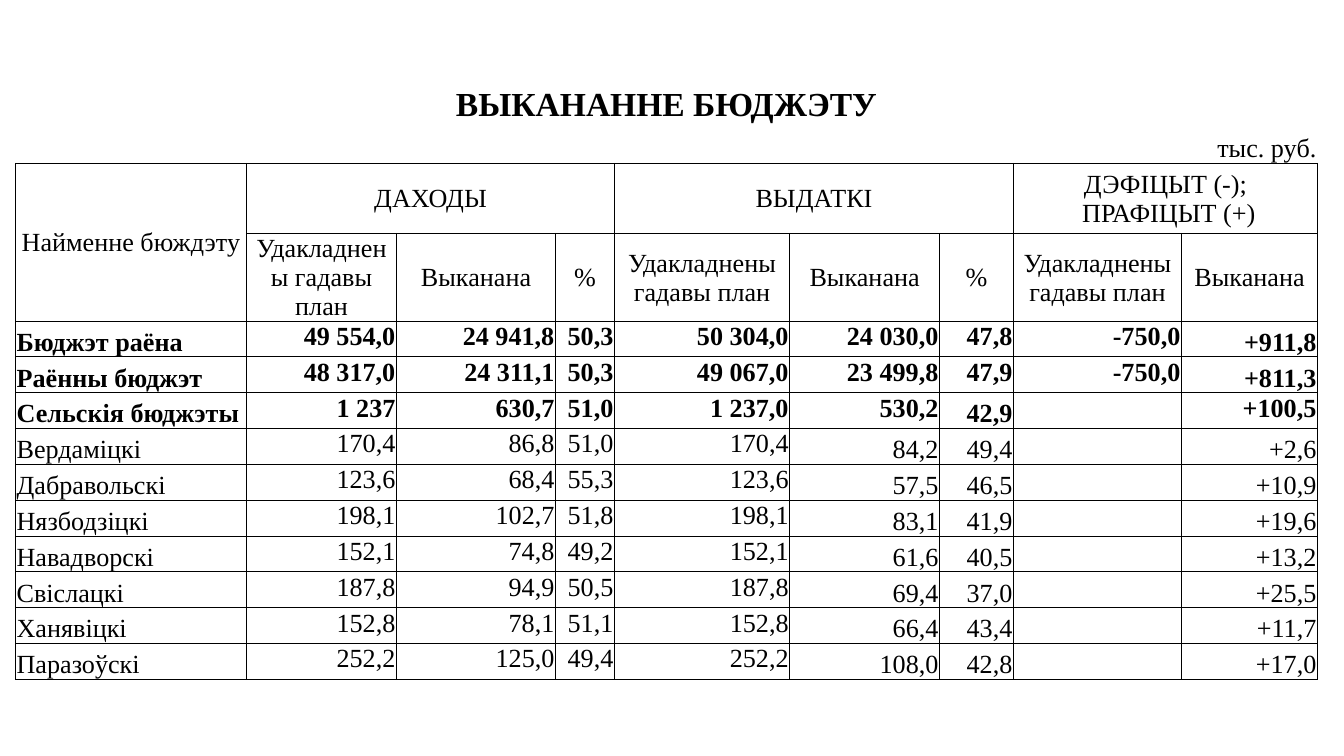
from lxml import etree
from pptx import Presentation
from pptx.dml.color import RGBColor
from pptx.enum.text import MSO_ANCHOR, PP_ALIGN
from pptx.oxml.ns import qn
from pptx.util import Pt

LEFT, CENTER, RIGHT = PP_ALIGN.LEFT, PP_ALIGN.CENTER, PP_ALIGN.RIGHT
ANCHORS = {"t": MSO_ANCHOR.TOP, "m": MSO_ANCHOR.MIDDLE, "b": MSO_ANCHOR.BOTTOM}

COL_WIDTHS = [123.8, 72.3, 8.1, 56.4, 28.8, 31.6, 93.9, 64.3, 16, 39.6, 90, 8.8, 64.1]
ROW_HEIGHTS = [24.5, 19, 37.5, 45.4] + [19.2] * 10

# First grid column and column span of each visible column
COLUMNS = [(0, 1), (1, 2), (3, 2), (5, 1), (6, 1), (7, 2), (9, 1), (10, 1), (11, 2)]
UNIT_ROW_SPANS = [(2, 2), (4, 2), (8, 2), (10, 2)]
GROUPS = [(1, 5, "ДАХОДЫ"), (6, 4, "ВЫДАТКІ"), (10, 3, "ДЭФІЦЫТ (-);\n ПРАФІЦЫТ (+)")]
PLAN, DONE = "Удакладнены гадавы план", "Выканана"
SUBHEADS = [PLAN, DONE, "%", PLAN, DONE, "%", PLAN, DONE]

BUDGETS = [
    ("Бюджэт раёна", "49 554,0", "24 941,8", "50,3", "50 304,0", "24 030,0", "47,8", "-750,0", "+911,8"),
    ("Раённы бюджэт", "48 317,0", "24 311,1", "50,3", "49 067,0", "23 499,8", "47,9", "-750,0", "+811,3"),
    ("Сельскія бюджэты", "1 237", "630,7", "51,0", "1 237,0", "530,2", "42,9", "", "+100,5"),
    ("Вердаміцкі", "170,4", "86,8", "51,0", "170,4", "84,2", "49,4", "", "+2,6"),
    ("Дабравольскі", "123,6", "68,4", "55,3", "123,6", "57,5", "46,5", "", "+10,9"),
    ("Нязбодзіцкі", "198,1", "102,7", "51,8", "198,1", "83,1", "41,9", "", "+19,6"),
    ("Навадворскі", "152,1", "74,8", "49,2", "152,1", "61,6", "40,5", "", "+13,2"),
    ("Свіслацкі", "187,8", "94,9", "50,5", "187,8", "69,4", "37,0", "", "+25,5"),
    ("Ханявіцкі", "152,8", "78,1", "51,1", "152,8", "66,4", "43,4", "", "+11,7"),
    ("Паразоўскі", "252,2", "125,0", "49,4", "252,2", "108,0", "42,8", "", "+17,0"),
]
BOLD_ROWS = 3
# Vertical anchors by column: two district rows, the rural total, seven villages
ROW_ANCHORS = ["btttttttb"] * 2 + ["btttttbtt"] + ["bttttbbtb"] * 7


def rgb(color):
    return RGBColor.from_string(color)


class Deck:
    font, size, ink, line = "Times New Roman", 14, "000000", 0.5

    def __init__(self, s):
        self.s = s

    def table(self, x, y, widths, heights):
        frame = self.s.shapes.add_table(len(heights), len(widths), Pt(x), Pt(y),
                                        Pt(sum(widths)), Pt(sum(heights)))
        tbl = frame.table
        tbl.first_row = tbl.horz_banding = False
        for col, width in zip(tbl.columns, widths):
            col.width = Pt(width)
        for row, height in zip(tbl.rows, heights):
            row.height = Pt(height)
        return tbl

    def blank_cell(self, cell, sides):
        """Clear the default look and size; draw the given sides (L, R, T, B)."""
        cell.margin_left = cell.margin_right = cell.margin_top = Pt(0.6)
        cell.margin_bottom = 0
        for side in "LRTB":
            self.border(cell, side, side in sides)
        cell.fill.background()
        end = cell.text_frame.paragraphs[0]._p.get_or_add_endParaRPr()
        end.set("sz", str(self.size * 100))

    def border(self, cell, side, visible):
        ln = etree.SubElement(cell._tc.get_or_add_tcPr(), qn(f"a:ln{side}"), w=str(Pt(self.line)))
        if visible:
            fill = etree.SubElement(ln, qn("a:solidFill"))
            etree.SubElement(fill, qn("a:srgbClr"), val=self.ink)
        else:
            etree.SubElement(ln, qn("a:noFill"))

    def text(self, cell, text, align=CENTER, anchor="m", bold=False, size=None):
        cell.vertical_anchor = ANCHORS[anchor]
        if not text:
            return
        cell.text = text
        for p in cell.text_frame.paragraphs:
            p.alignment = align
            p.font.name, p.font.size, p.font.bold = self.font, Pt(size or self.size), bold
            p.font.color.rgb = rgb(self.ink)


def merge(tbl, row, col, cols, rows=1):
    """Merge a block of cells if it is more than one, and return its first cell."""
    cell = tbl.cell(row, col)
    if cols * rows > 1:
        cell.merge(tbl.cell(row + rows - 1, col + cols - 1))
    return cell


def main():
    prs = Presentation()
    prs.slide_width, prs.slide_height = Pt(720), Pt(405)
    deck = Deck(prs.slides.add_slide(prs.slide_layouts[6]))
    tbl = deck.table(8.3, 44, COL_WIDTHS, ROW_HEIGHTS)
    for r in range(len(ROW_HEIGHTS)):
        for c in range(len(COL_WIDTHS)):
            deck.blank_cell(tbl.cell(r, c), ["", "B"][r] if r < 2 else "LRTB")

    deck.text(merge(tbl, 0, 0, len(COL_WIDTHS)), "ВЫКАНАННЕ БЮДЖЭТУ", bold=True, size=18)
    for col, span in UNIT_ROW_SPANS:
        merge(tbl, 1, col, span)
    deck.text(tbl.cell(1, 12), "тыс. руб.", RIGHT, "b")

    deck.text(merge(tbl, 2, 0, 1, rows=2), "Найменне бюждэту")
    for col, span, label in GROUPS:
        deck.text(merge(tbl, 2, col, span), label)
    for (col, span), label in zip(COLUMNS[1:], SUBHEADS):
        deck.text(merge(tbl, 3, col, span), label)

    for i, (budget, anchors) in enumerate(zip(BUDGETS, ROW_ANCHORS)):
        for (col, span), value, anchor in zip(COLUMNS, budget, anchors):
            deck.text(merge(tbl, 4 + i, col, span), value, RIGHT if col else LEFT,
                      anchor, bold=i < BOLD_ROWS)
    prs.save("out.pptx")


if __name__ == "__main__":
    main()
